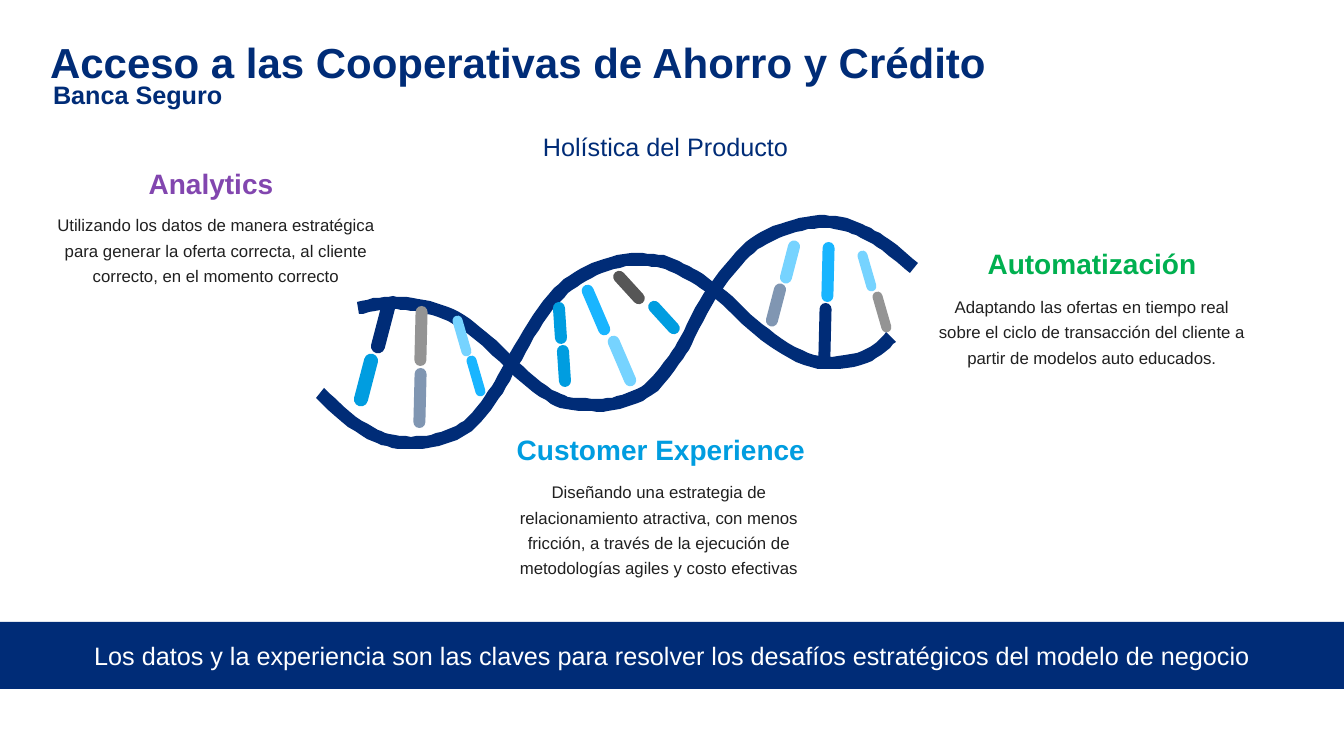
"""Build the slide on access to savings and credit cooperatives, with its DNA helix."""
import math
from dataclasses import dataclass

from lxml import etree
from pptx import Presentation
from pptx import util as u
from pptx.dml.color import RGBColor
from pptx.enum import shapes, text
from pptx.oxml.ns import qn


@dataclass(frozen=True)
class Theme:
    font: str = "Arial"
    navy: str = "002C77"
    blue: str = "009DE0"
    bright: str = "19B5FF"
    sky: str = "76D3FF"
    slate: str = "8096B2"
    grey: str = "949494"
    dark: str = "565656"
    purple: str = "8246AF"
    green: str = "00B050"
    ink: str = "202020"
    white: str = "FFFFFF"
    title: int = 30
    lead: int = 18
    heading: int = 20
    body: int = 12


theme = Theme()
PX = 12192000 / 1344
align = text.PP_ALIGN


def write(frame, words, size, color, bold=False, alignment=None, spacing=None):
    paragraph = frame.paragraphs[0]
    paragraph.text = words
    paragraph.alignment = alignment
    paragraph.line_spacing = spacing
    paragraph.font.name = theme.font
    paragraph.font.size = u.Pt(size)
    paragraph.font.bold = bold
    paragraph.font.color.rgb = RGBColor.from_string(color)
    return paragraph


def paint(shape, color):
    shape.shadow.inherit = False
    shape.fill.solid()
    shape.fill.fore_color.rgb = RGBColor.from_string(color)
    shape.line.fill.background()


deck = Presentation()
deck.slide_width, deck.slide_height = round(1344 * PX), round(756 * PX)
slide = deck.slides.add_slide(deck.slide_layouts[1])
canvas = slide.shapes

title, subtitle = canvas.title, slide.placeholders[1]
for holder, box in ((title, (50, 39, 1241, 54)), (subtitle, (53, 79, 1237, 35))):
    holder.left, holder.top, holder.width, holder.height = [round(v * PX) for v in box]
    frame = holder.text_frame
    frame.margin_left = frame.margin_right = frame.margin_top = frame.margin_bottom = 0
    frame.auto_size = text.MSO_AUTO_SIZE.NONE
    frame.vertical_anchor = text.MSO_ANCHOR.TOP
title.text_frame.vertical_anchor = text.MSO_ANCHOR.MIDDLE
write(title.text_frame, "Acceso a las Cooperativas de Ahorro y Crédito",
      theme.title, theme.navy, True, align.LEFT, 0.8)
subtitle_format = subtitle.text_frame.paragraphs[0]._p.get_or_add_pPr()
subtitle_format.set("marL", "0")
subtitle_format.set("indent", "0")
etree.SubElement(subtitle_format, qn("a:buNone"))
subtitle_line = write(subtitle.text_frame, "Banca Seguro", theme.lead, theme.navy, True, align.LEFT)
subtitle_line.space_before = u.Pt(0)
subtitle_line.space_after = u.Pt(6)

STRAND_HALF_WIDTH = 6.5
CURVE_STEPS = 4
strands = (
    ((320, 393), (346, 417), (370, 433), (388, 440), (411, 443), (432, 441), (454, 434),
     (472, 422), (490, 400), (504, 378), (520, 349), (538, 319), (559, 293), (578, 278),
     (600, 267), (625, 260), (648, 260), (667, 263), (686, 272), (704, 283), (728, 301),
     (752, 324), (778, 344), (806, 359), (832, 363), (859, 359), (877, 350), (891, 337)),
    ((358, 308), (380, 304), (397, 303), (417, 305), (440, 311), (461, 321), (482, 337),
     (503, 356), (525, 377), (549, 395), (567, 403), (592, 405), (613, 404), (635, 397),
     (653, 386), (674, 360), (686, 341), (701, 311), (719, 283), (741, 256), (759, 241),
     (782, 230), (807, 223), (830, 222), (850, 226), (868, 234), (886, 245), (914, 268)),
)
for knots in strands:
    padded = (knots[0], *knots, knots[-1])
    centre = []
    for a, b, c, d in zip(padded, padded[1:], padded[2:], padded[3:]):
        for step in range(CURVE_STEPS):
            t = step / CURVE_STEPS
            centre.append([
                (2 * q + (r - p) * t + (2 * p - 5 * q + 4 * r - s) * t**2
                 + (3 * q - p - 3 * r + s) * t**3) / 2
                for p, q, r, s in zip(a, b, c, d)])
    centre.append(knots[-1])
    upper, lower = [], []
    for before, (x, y), after in zip(centre[:1] + centre, centre, centre[1:] + centre[-1:]):
        dx, dy = after[0] - before[0], after[1] - before[1]
        reach = STRAND_HALF_WIDTH / math.hypot(dx, dy)
        upper.append((x + dy * reach, y - dx * reach))
        lower.append((x - dy * reach, y + dx * reach))
    outline = upper + lower[::-1]
    builder = canvas.build_freeform(*outline[0], scale=PX)
    builder.add_line_segments(outline[1:], close=True)
    paint(builder.convert_to_shape(), theme.navy)

rungs = (
    (376, 300, 14, 54, 14.6, theme.navy), (359, 353, 14, 54, 14.6, theme.blue),
    (415, 306, 12, 60, 1.4, theme.grey), (414, 368, 12, 60, 1.4, theme.slate),
    (457, 315, 10, 42, -16.1, theme.sky), (471, 355, 10, 42, -16.1, theme.bright),
    (554, 302, 12, 42, -3.8, theme.blue), (558, 345, 12, 42, -3.8, theme.blue),
    (590, 283, 12, 54, -23.2, theme.bright), (616, 334, 12, 54, -23.2, theme.sky),
    (623, 267, 12, 41, -42.4, theme.dark), (658, 297, 12, 41, -42.4, theme.blue),
    (784, 240, 12, 44, 14.6, theme.sky), (770, 283, 12, 44, 14.6, theme.slate),
    (822, 242, 12, 60, 1.4, theme.bright), (819, 303, 12, 60, 1.4, theme.navy),
    (862, 250, 10, 42, -16.1, theme.sky), (877, 291, 10, 42, -16.1, theme.grey),
)
for *box, angle, color in rungs:
    rung = canvas.add_shape(shapes.MSO_SHAPE.ROUNDED_RECTANGLE, *[round(v * PX) for v in box])
    rung.adjustments[0] = 0.5
    rung.rotation = angle
    paint(rung, color)

pillars = (
    ("Analytics", theme.purple, (50, 163, 322, 40), (41, 205, 350, 84),
     "Utilizando los datos de manera estratégica para generar la oferta correcta, "
     "al cliente correcto, en el momento correcto"),
    ("Customer Experience", theme.blue, (500, 429, 322, 40), (493, 472, 332, 108),
     "Diseñando una estrategia de relacionamiento atractiva, con menos fricción, "
     "a través de la ejecución de metodologías agiles y costo efectivas"),
    ("Automatización", theme.green, (931, 243, 322, 40), (926, 287, 332, 108),
     "Adaptando las ofertas en tiempo real sobre el ciclo de transacción del cliente "
     "a partir de modelos auto educados."),
)
for heading, color, heading_box, detail_box, detail in pillars:
    for box, words, size, tone, bold, spacing in (
            (heading_box, heading, theme.heading, color, True, 23),
            (detail_box, detail, theme.body, theme.ink, False, 18)):
        frame = canvas.add_textbox(*[round(v * PX) for v in box]).text_frame
        frame.word_wrap = True
        write(frame, words, size, tone, bold, align.CENTER, u.Pt(spacing))

banner = canvas.add_shape(shapes.MSO_SHAPE.RECTANGLE,
                          *[round(v * PX) for v in (0, 622, 1344, 67)])
paint(banner, theme.navy)
banner.text_frame.vertical_anchor = text.MSO_ANCHOR.MIDDLE
write(banner.text_frame,
      "Los datos y la experiencia son las claves para resolver los desafíos estratégicos "
      "del modelo de negocio", theme.lead, theme.white, alignment=align.CENTER)

product = canvas.add_textbox(*[round(v * PX) for v in (533, 126, 268, 40)]).text_frame
product.word_wrap = False
product.auto_size = text.MSO_AUTO_SIZE.SHAPE_TO_FIT_TEXT
write(product, "Holística del Producto", theme.lead, theme.navy)

deck.save("out.pptx")
